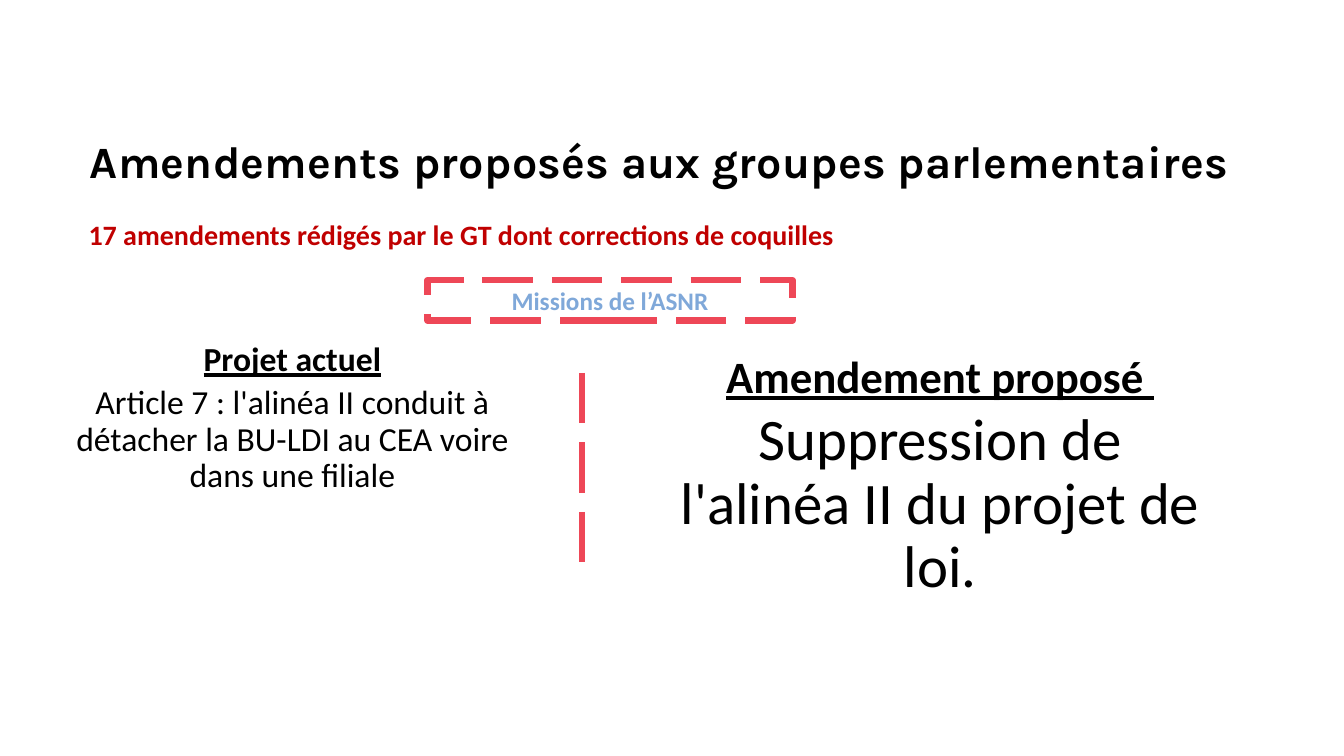
import pptx
import pptx.util
import pptx.dml.color
import pptx.enum.dml
import pptx.enum.shapes
import pptx.enum.text
import lxml.etree
import pptx.oxml.ns

Inches = pptx.util.Inches
Pt = pptx.util.Pt
RGBColor = pptx.dml.color.RGBColor
ALIGN = pptx.enum.text.PP_ALIGN
ANCHOR = pptx.enum.text.MSO_ANCHOR

BLACK = RGBColor(0x00, 0x00, 0x00)
DARK_RED = RGBColor(0xC0, 0x00, 0x00)
CORAL = RGBColor(0xEE, 0x47, 0x57)
LIGHT_BLUE = RGBColor(0x7F, 0xA8, 0xD9)


class AmendmentSlide:
    title_font = "Karla"
    body_font = "Calibri"

    def __init__(self, prs):
        self.slide = prs.slides.add_slide(prs.slide_layouts[5])

    def place(self, sp, left, top, width, height):
        sp.left, sp.top = Inches(left), Inches(top)
        sp.width, sp.height = Inches(width), Inches(height)

    def style(self, p, font, size, color, bold=True, underline=False):
        for r in p.runs:
            r.font.name = font
            r.font.size = Pt(size)
            r.font.bold = bold
            r.font.underline = underline
            r.font.color.rgb = color

    def dash(self, line):
        line.color.rgb = CORAL
        line.width = Pt(4.5)
        line.dash_style = pptx.enum.dml.MSO_LINE.LONG_DASH

    def title(self, text, *box):
        sp = self.slide.shapes.title
        self.place(sp, *box)
        tf = sp.text_frame
        tf.text = text
        tf.word_wrap = True
        tf.auto_size = pptx.enum.text.MSO_AUTO_SIZE.NONE
        tf.vertical_anchor = ANCHOR.TOP
        tf.margin_left = tf.margin_top = tf.margin_right = tf.margin_bottom = 0
        p = tf.paragraphs[0]
        p.alignment = ALIGN.LEFT
        p.line_spacing = Pt(43)
        p.space_before = Pt(0)
        self.style(p, self.title_font, 32, BLACK)
        for r in p.runs:
            r.font._element.set("spc", "20")

    def text(self, paragraphs, *box, color=BLACK, align=ALIGN.CENTER):
        sp = self.slide.shapes.add_textbox(*map(Inches, box))
        tf = sp.text_frame
        tf.word_wrap = True
        for i, (text, size, heading) in enumerate(paragraphs):
            p = tf.add_paragraph() if i else tf.paragraphs[0]
            p.text = text
            p.alignment = align
            p.line_spacing = 0.9
            p.space_before = Pt(5 if i else 0)
            p._p.get_or_add_pPr().set("marL", str(Inches(0.5)))
            underline = heading and align == ALIGN.CENTER
            self.style(p, self.body_font, size, color, heading, underline)

    def label(self, text, *box):
        rect = pptx.enum.shapes.MSO_SHAPE.RECTANGLE
        sp = self.slide.shapes.add_shape(rect, *map(Inches, box))
        sp.shadow.inherit = False
        sp.fill.background()
        self.dash(sp.line)
        tf = sp.text_frame
        tf.text = text
        tf.word_wrap = True
        tf.vertical_anchor = ANCHOR.MIDDLE
        p = tf.paragraphs[0]
        p.alignment = ALIGN.CENTER
        self.style(p, self.body_font, 18, LIGHT_BLUE)

    def divider(self, x, top, bottom):
        straight = pptx.enum.shapes.MSO_CONNECTOR.STRAIGHT
        line = self.slide.shapes.add_connector(
            straight, Inches(x), Inches(top), Inches(x), Inches(bottom))
        self.dash(line.line)
        lxml.etree.SubElement(line._element.spPr, pptx.oxml.ns.qn("a:effectLst"))


def main():
    prs = pptx.Presentation()
    prs.slide_width, prs.slide_height = Inches(13.33), Inches(7.5)
    s = AmendmentSlide(prs)
    s.title("Amendements proposés aux groupes parlementaires", 0.89, 1.26, 11.66, 1.04)
    s.text([("17 amendements rédigés par le GT dont corrections de coquilles", 20, True)],
           0.28, 2.15, 12.27, 0.82, color=DARK_RED, align=ALIGN.LEFT)
    s.divider(5.77, 3.7, 5.68)
    s.text([("Projet actuel", 24, True),
            ("Article 7 : l'alinéa II conduit à détacher la BU-LDI au CEA "
             "voire dans une filiale", 24, False)],
           -0.13, 3.35, 5.56, 2.89)
    s.text([("Amendement proposé ", 32, True),
            ("Suppression de l'alinéa II du projet de loi.", 42, False)],
           6.11, 3.47, 5.93, 3.27)
    s.label("Missions de l’ASNR", 4.24, 2.78, 3.62, 0.4)
    prs.save("out.pptx")


if __name__ == "__main__":
    main()
